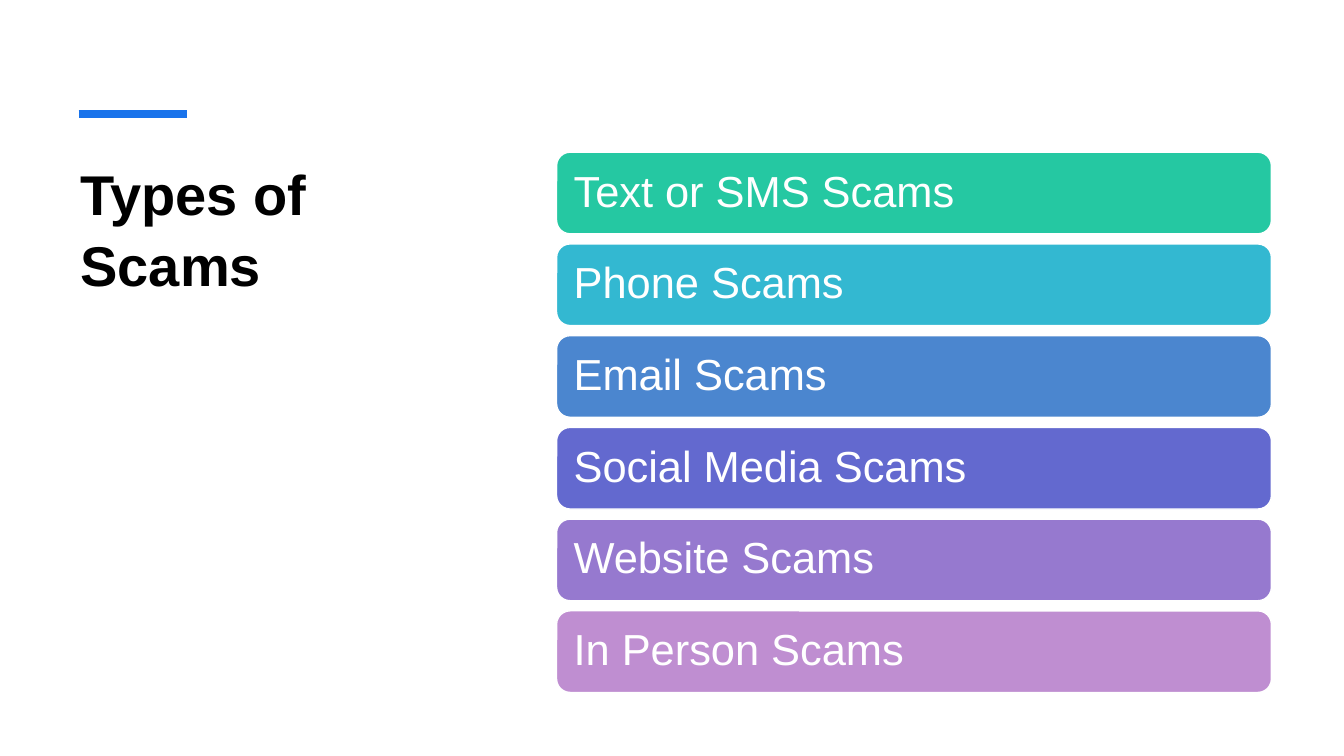
from dataclasses import dataclass

from pptx import Presentation
from pptx.dml.color import RGBColor
from pptx.enum.shapes import MSO_CONNECTOR, MSO_SHAPE
from pptx.enum.text import MSO_ANCHOR, PP_ALIGN
from pptx.oxml.ns import qn
from pptx.shapes.autoshape import Shape
from pptx.slide import Slide
from pptx.util import Emu, Pt

ROUND = MSO_SHAPE.ROUNDED_RECTANGLE
STRAIGHT = MSO_CONNECTOR.STRAIGHT
TOP, MIDDLE = MSO_ANCHOR.TOP, MSO_ANCHOR.MIDDLE
LEFT = PP_ALIGN.LEFT
SCALE = 9144  # 100 px to the inch


@dataclass(frozen=True)
class Theme:
    font: str = "Arial"
    ink: str = "000000"
    paper: str = "FFFFFF"
    accent: str = "1973EB"
    title: int = 40
    label: int = 31
    rule: int = 6
    edge: int = 1


@dataclass(frozen=True)
class Box:
    left: int
    top: int
    width: int
    height: int

    def emu(self) -> tuple[Emu, Emu, Emu, Emu]:
        return px(self.left), px(self.top), px(self.width), px(self.height)


@dataclass(frozen=True)
class Scam:
    name: str
    fill: str


THEME = Theme()
TITLE = Box(70, 150, 402, 429)
FIRST = Box(552, 151, 709, 81)
STEP = 91
SCAMS = (
    Scam("Text or SMS Scams", "25C8A2"),
    Scam("Phone Scams", "33B8D1"),
    Scam("Email Scams", "4B86CF"),
    Scam("Social Media Scams", "6369CF"),
    Scam("Website Scams", "9679CF"),
    Scam("In Person Scams", "BF8ED1"),
)


def px(count: int) -> Emu:
    return Emu(count * SCALE)


def rgb(code: str) -> RGBColor:
    return RGBColor.from_string(code)


def write(shape: Shape, text: str, *, size: int, color: str,
          bold: bool = False, anchor: MSO_ANCHOR = TOP, lead: float = 1.0,
          side: int = 10, edge: int = 5) -> None:
    """Fill a shape with one left-aligned paragraph; side and edge are insets."""
    frame = shape.text_frame
    frame.word_wrap = True
    frame.vertical_anchor = anchor
    frame.margin_left = frame.margin_right = px(side)
    frame.margin_top = frame.margin_bottom = px(edge)
    para = frame.paragraphs[0]
    para.alignment = LEFT
    para.line_spacing = lead
    run = para.add_run()
    run.text = text
    font = run.font
    font.name, font.size, font.bold = THEME.font, Pt(size), bold
    font.color.rgb = rgb(color)


def add_rule(slide: Slide, left: int, right: int, top: int) -> None:
    rule = slide.shapes.add_connector(
        STRAIGHT, px(left), px(top), px(right), px(top))
    rule.line.color.rgb = rgb(THEME.accent)
    rule.line.width = Pt(THEME.rule)
    props = rule._element.spPr
    props.append(props.makeelement(qn("a:effectLst"), {}))


def add_bar(slide: Slide, scam: Scam, box: Box) -> None:
    bar = slide.shapes.add_shape(ROUND, *box.emu())
    bar.shadow.inherit = False
    bar.fill.solid()
    bar.fill.fore_color.rgb = rgb(scam.fill)
    bar.line.color.rgb = rgb(THEME.paper)
    bar.line.width = Pt(THEME.edge)
    write(bar, scam.name, size=THEME.label, color=THEME.paper,
          anchor=MIDDLE, lead=0.9, side=13, edge=13)


def main() -> None:
    deck = Presentation()
    deck.slide_width, deck.slide_height = px(1333), px(750)
    slide = deck.slides.add_slide(deck.slide_layouts[6])
    title = slide.shapes.add_textbox(*TITLE.emu())
    write(title, "Types of Scams", size=THEME.title, color=THEME.ink,
          bold=True, lead=1.05)
    add_rule(slide, 78, 185, 113)
    for row, scam in enumerate(SCAMS):
        top = FIRST.top + row * STEP
        add_bar(slide, scam, Box(FIRST.left, top, FIRST.width, FIRST.height))
    deck.save("out.pptx")


if __name__ == "__main__":
    main()
